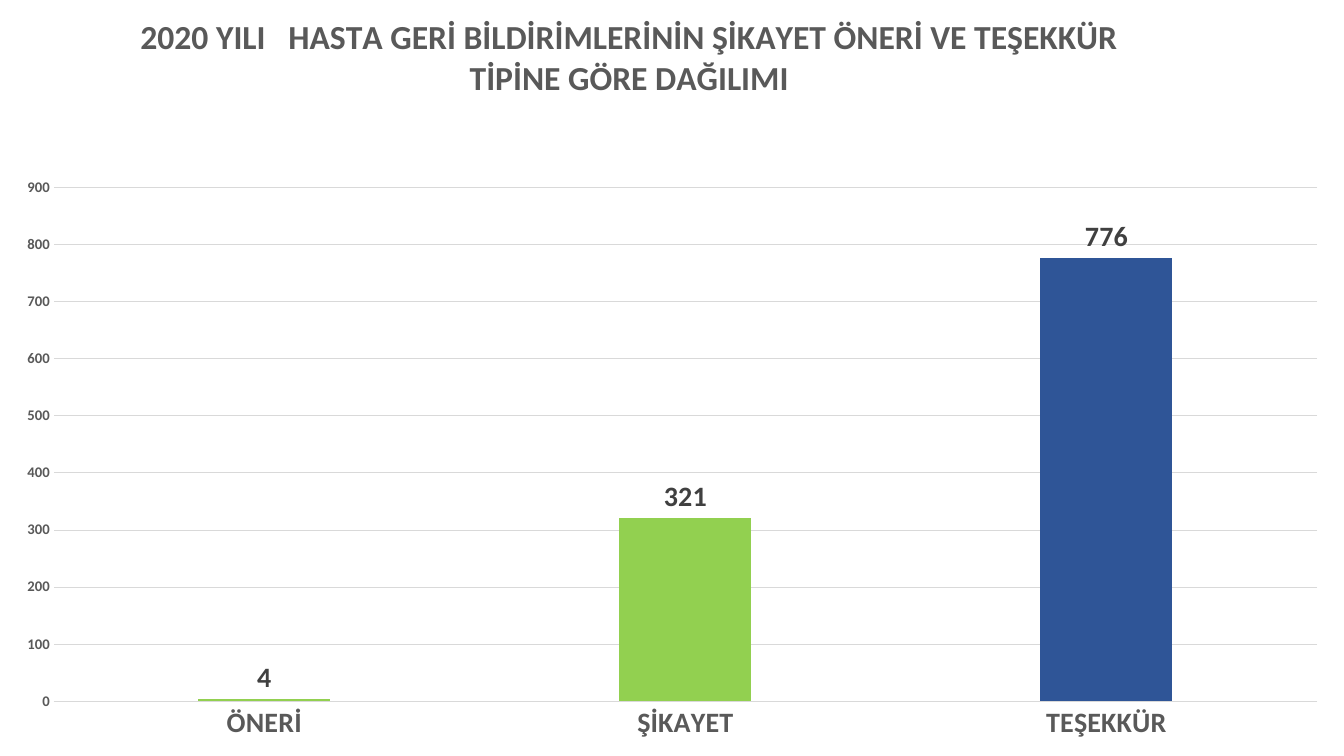
import pptx
import pptx.chart.data
import pptx.dml.color
import pptx.enum.chart
import pptx.oxml
import pptx.oxml.ns
import pptx.util

TITLE = "2020 YILI   HASTA GERİ BİLDİRİMLERİNİN ŞİKAYET ÖNERİ VE TEŞEKKÜR TİPİNE GÖRE DAĞILIMI"
FEEDBACK = {"ÖNERİ": 4, "ŞİKAYET": 321, "TEŞEKKÜR": 776}
GREEN, BLUE = "92D050", "2F5597"
GREY, DARK, PALE = "595959", "404040", "D9D9D9"


def rgb(color):
    return pptx.dml.color.RGBColor.from_string(color)


def set_font(font, size, color):
    font.name = "Calibri"
    font.size = pptx.util.Pt(size)
    font.bold = True
    font.color.rgb = rgb(color)


def set_line(line, color):
    line.color.rgb = rgb(color)
    line.width = pptx.util.Pt(0.75)


def set_fill(fill, color):
    fill.solid()
    fill.fore_color.rgb = rgb(color)


def add_text(tf, text, size, color):
    p = tf.paragraphs[0]
    r = p.add_run()
    r.text = text
    set_font(r.font, size, color)


def place(parent, successors, inner=False, **shares):
    for old in parent.findall(pptx.oxml.ns.qn("c:layout")):
        parent.remove(old)
    target = '<c:layoutTarget val="inner"/>' if inner else ""
    modes = "".join(f'<c:{key}Mode val="edge"/>' for key in ("x", "y"))
    values = "".join(f'<c:{key} val="{value}"/>' for key, value in shares.items())
    layout = pptx.oxml.parse_xml(
        f'<c:layout {pptx.oxml.ns.nsdecls("c")}><c:manualLayout>'
        f"{target}{modes}{values}</c:manualLayout></c:layout>"
    )
    parent.insert_element_before(layout, *successors)


def style_axis(axis, size):
    axis.major_tick_mark = pptx.enum.chart.XL_TICK_MARK.NONE
    axis.minor_tick_mark = pptx.enum.chart.XL_TICK_MARK.NONE
    set_font(axis.tick_labels.font, size, GREY)


def add_title(chart):
    chart.has_title = True
    add_text(chart.chart_title.text_frame, TITLE, 24, GREY)
    title = chart._chartSpace.chart.find(pptx.oxml.ns.qn("c:title"))
    place(title, ("c:overlay", "c:spPr", "c:txPr"), x=0.1, y=0.01)


def add_feedback_chart(slide, left, top, width, height):
    data = pptx.chart.data.CategoryChartData()
    data.categories = list(FEEDBACK)
    data.add_series("Series 1", list(FEEDBACK.values()))
    kind = pptx.enum.chart.XL_CHART_TYPE.COLUMN_CLUSTERED
    chart = slide.shapes.add_chart(kind, left, top, width, height, data).chart
    chart.has_legend = False
    set_font(chart.font, 20, "000000")
    add_title(chart)

    plot_area = chart._chartSpace.chart.plotArea
    place(plot_area, ("c:barChart",), inner=True, x=0.04, y=0.248, w=0.94, h=0.68)

    style_axis(chart.category_axis, 20)
    set_line(chart.category_axis.format.line, PALE)
    style_axis(chart.value_axis, 10.5)
    chart.value_axis.format.line.fill.background()
    chart.value_axis.minimum_scale = 0
    chart.value_axis.maximum_scale = 900
    chart.value_axis.major_unit = 100
    set_line(chart.value_axis.major_gridlines.format.line, PALE)

    plot = chart.plots[0]
    plot.gap_width = 219
    plot.overlap = -27
    plot.vary_by_categories = False
    series = plot.series[0]
    set_fill(series.format.fill, GREEN)
    set_fill(series.points[2].format.fill, BLUE)
    labels = series.data_labels
    labels.show_value = True
    labels.position = pptx.enum.chart.XL_LABEL_POSITION.OUTSIDE_END
    set_font(labels.font, 20, DARK)


def main():
    prs = pptx.Presentation()
    prs.slide_width = pptx.util.Inches(13.33)
    prs.slide_height = pptx.util.Inches(7.5)
    slide = prs.slides.add_slide(prs.slide_layouts[6])
    set_fill(slide.background.fill, "FFFFFF")
    add_feedback_chart(slide, 0, 0, prs.slide_width, prs.slide_height)
    prs.save("out.pptx")


if __name__ == "__main__":
    main()
